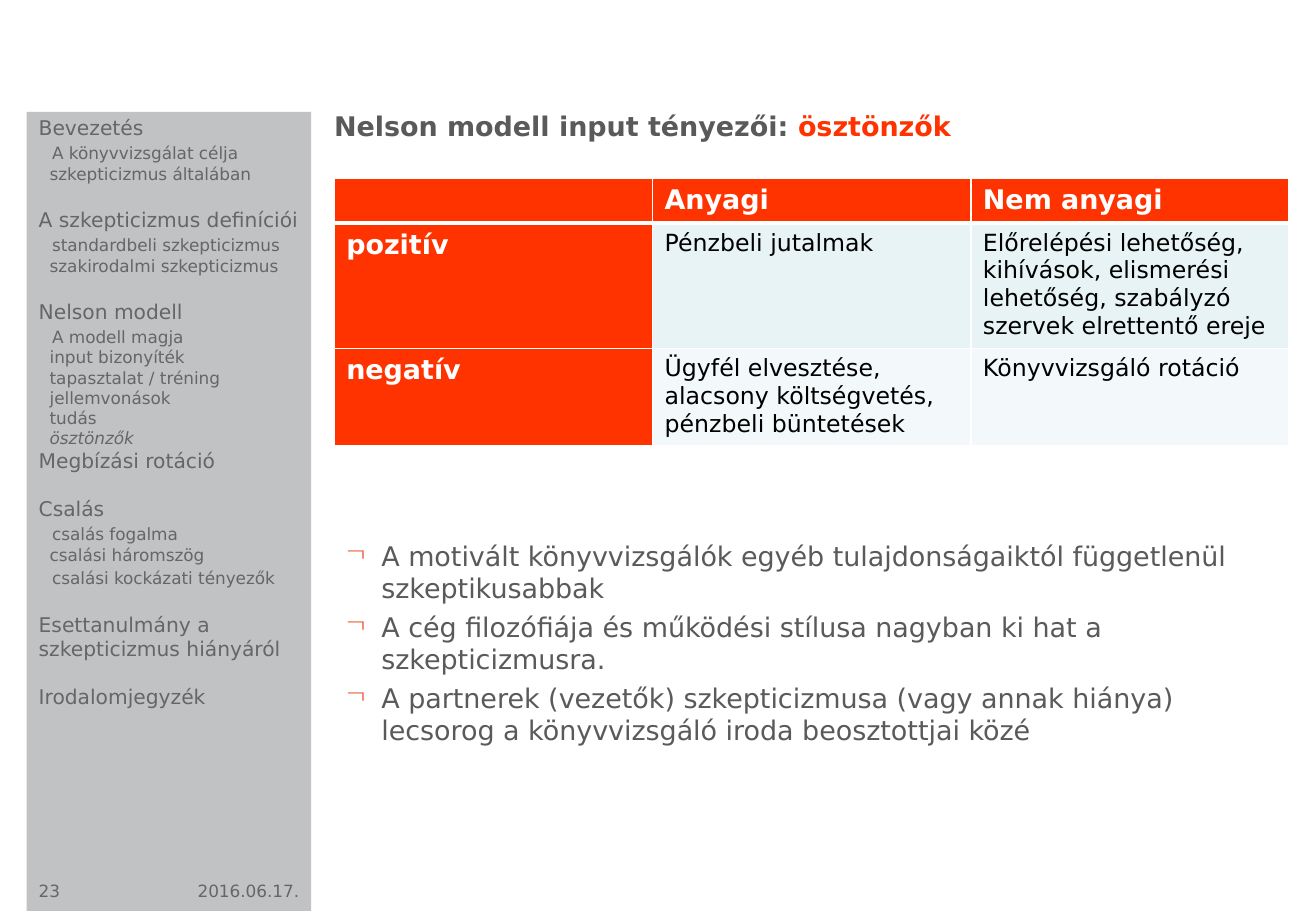
import pptx
import pptx.util
import pptx.dml.color
import pptx.enum.shapes
import pptx.enum.text
import pptx.oxml
import pptx.oxml.ns
from lxml import etree

Inches, Pt = pptx.util.Inches, pptx.util.Pt
RGBColor = pptx.dml.color.RGBColor
Align, Anchor = pptx.enum.text.PP_ALIGN, pptx.enum.text.MSO_ANCHOR
qn = pptx.oxml.ns.qn

FONT = "DejaVu Sans"
WHITE = RGBColor(0xFF, 0xFF, 0xFF)
BLACK = RGBColor(0, 0, 0)
PANEL_GREY = RGBColor(0xC1, 0xC2, 0xC4)
MENU_GREY = RGBColor(0x66, 0x66, 0x66)
TEXT_GREY = RGBColor(0x5A, 0x5A, 0x5A)
ACCENT = RGBColor(0xFF, 0x33, 0x00)
BULLET = RGBColor(0xEA, 0x66, 0x45)
BANDS = [RGBColor(0xE7, 0xF3, 0xF4), RGBColor(0xF3, 0xF9, 0xFA)]

# Agenda groups: heading, entries, whether a gap precedes the heading
AGENDA = [
    ("Bevezetés", ["A könyvvizsgálat célja", "szkepticizmus általában"], False),
    ("A szkepticizmus definíciói",
     ["standardbeli szkepticizmus", "szakirodalmi szkepticizmus"], True),
    ("Nelson modell",
     ["A modell magja", "input bizonyíték", "tapasztalat / tréning",
      "jellemvonások", "tudás", "ösztönzők"], True),
    ("Megbízási rotáció", [], False),
    ("Csalás", ["csalás fogalma", "csalási háromszög",
                "csalási kockázati tényezők"], True),
    ("Esettanulmány a szkepticizmus hiányáról", [], True),
    ("Irodalomjegyzék", [], True),
]
CURRENT_ENTRY = "ösztönzők"
WIDE_ENTRIES = {"csalási kockázati tényezők"}

INCENTIVES = [
    ["", "Anyagi", "Nem anyagi"],
    ["pozitív", "Pénzbeli jutalmak",
     "Előrelépési lehetőség, kihívások, elismerési lehetőség, "
     "szabályzó szervek elrettentő ereje"],
    ["negatív", "Ügyfél elvesztése, alacsony költségvetés, pénzbeli büntetések",
     "Könyvvizsgáló rotáció"],
]
FINDINGS = [
    "A motivált könyvvizsgálók egyéb tulajdonságaiktól függetlenül szkeptikusabbak",
    "A cég filozófiája és működési stílusa nagyban ki hat a szkepticizmusra.",
    "A partnerek (vezetők) szkepticizmusa (vagy annak hiánya) lecsorog "
    "a könyvvizsgáló iroda beosztottjai közé",
]


class SlideBuilder:
    def __init__(self, slide):
        self.slide = slide

    def style(self, paragraph, size, color, bold=False, italic=False):
        font = paragraph.font
        font.name, font.size = FONT, Pt(size)
        font.bold, font.italic = bold, italic
        font.color.rgb = color

    def panel(self, left, top, width, height, color):
        panel = self.slide.shapes.add_shape(
            pptx.enum.shapes.MSO_SHAPE.RECTANGLE,
            Inches(left), Inches(top), Inches(width), Inches(height))
        panel.shadow.inherit = False
        panel.fill.solid()
        panel.fill.fore_color.rgb = color
        panel.line.fill.background()

    def frame(self, left, top, width, height, anchor=Anchor.TOP):
        frame = self.slide.shapes.add_textbox(
            Inches(left), Inches(top), Inches(width), Inches(height)).text_frame
        frame.word_wrap = True
        frame.vertical_anchor = anchor
        return frame

    def label(self, text, left, top, width, height, align, anchor):
        line = self.frame(left, top, width, height, anchor).paragraphs[0]
        line.text, line.alignment = text, align
        self.style(line, 10, MENU_GREY)

    def title(self, lead, topic, left, top, width, height):
        frame = self.frame(left, top, width, height, Anchor.MIDDLE)
        frame.margin_left = frame.margin_right = 0
        frame.margin_top = frame.margin_bottom = 0
        heading = frame.paragraphs[0]
        self.style(heading, 16, TEXT_GREY, bold=True)
        heading.add_run().text = lead
        topic_run = heading.add_run()
        topic_run.text = topic
        topic_run.font.color.rgb = ACCENT

    def agenda(self, groups, left, top, width, height):
        frame = self.frame(left, top, width, height)
        line = frame.paragraphs[0]
        for heading, entries, gap in groups:
            if line.text:
                line = frame.add_paragraph()
            line.text = heading
            if gap:
                line.space_before = Pt(14)
            self.style(line, 12, MENU_GREY)
            for index, entry in enumerate(entries):
                line = frame.add_paragraph()
                line.text = entry
                wide = index == 0 or entry in WIDE_ENTRIES
                if wide:
                    line.space_before = Pt(2)
                line._p.get_or_add_pPr().set("marL", str(Inches(0.11 if wide else 0.09)))
                self.style(line, 10, MENU_GREY, italic=entry == CURRENT_ENTRY)

    def bullets(self, items, left, top, width, height):
        frame = self.frame(left, top, width, height)
        for index, item in enumerate(items):
            line = frame.add_paragraph() if index else frame.paragraphs[0]
            line.text = item
            if index:
                line.space_before = Pt(3.7)
            props = line._p.get_or_add_pPr()
            props.set("marL", str(Inches(0.29)))
            props.set("indent", str(-Inches(0.29)))
            color = etree.SubElement(props, qn("a:buClr"))
            etree.SubElement(color, qn("a:srgbClr"), val=str(BULLET))
            etree.SubElement(props, qn("a:buSzPct"), val="120000")
            etree.SubElement(props, qn("a:buChar"), char="¬")
            self.style(line, 16, TEXT_GREY)

    def borders(self, cell, bottom):
        props = cell._tc.get_or_add_tcPr()
        for side, width in (("L", 1), ("R", 1), ("T", 1), ("B", bottom)):
            edge = etree.SubElement(props, qn("a:ln" + side), w=str(Pt(width)))
            fill = etree.SubElement(edge, qn("a:solidFill"))
            etree.SubElement(fill, qn("a:srgbClr"), val=str(WHITE))

    def table(self, rows, left, top, column_width, heights):
        table = self.slide.shapes.add_table(
            len(rows), len(rows[0]), Inches(left), Inches(top),
            Inches(column_width * len(rows[0])), Inches(sum(heights))).table
        table.horz_banding = False
        for column in table.columns:
            column.width = Inches(column_width)
        for r, texts in enumerate(rows):
            table.rows[r].height = Inches(heights[r])
            for c, text in enumerate(texts):
                cell, header = table.cell(r, c), r == 0 or c == 0
                self.borders(cell, 1 if r else 3)
                cell.fill.solid()
                cell.fill.fore_color.rgb = ACCENT if header else BANDS[r - 1]
                if text:
                    cell.text = text
                else:
                    cell.margin_top = cell.margin_bottom = 0
                self.style(cell.text_frame.paragraphs[0], 16 if header else 14,
                           WHITE if header else BLACK, bold=header)


def main():
    deck = pptx.Presentation()
    deck.slide_width, deck.slide_height = Inches(10.83), Inches(7.5)
    page = SlideBuilder(deck.slides.add_slide(deck.slide_layouts[6]))

    # Side panel with agenda, page number and date
    page.panel(0.22, 0.92, 2.34, 6.58, PANEL_GREY)
    page.label("2016.06.17.", 1.39, 7.2, 1.17, 0.27, Align.RIGHT, Anchor.BOTTOM)
    page.label("23", 0.22, 7.2, 0.79, 0.27, Align.LEFT, Anchor.TOP)
    page.agenda(AGENDA, 0.22, 0.9, 2.41, 6.31)

    # Main content
    page.title("Nelson modell input tényezői: ", "ösztönzők", 2.75, 0.9, 7.86, 0.27)
    page.table(INCENTIVES, 2.75, 1.47, 2.62, [0.35, 1.01, 0.78])
    page.bullets(FINDINGS, 2.75, 4.39, 7.8, 1.84)

    deck.save("out.pptx")


if __name__ == "__main__":
    main()
